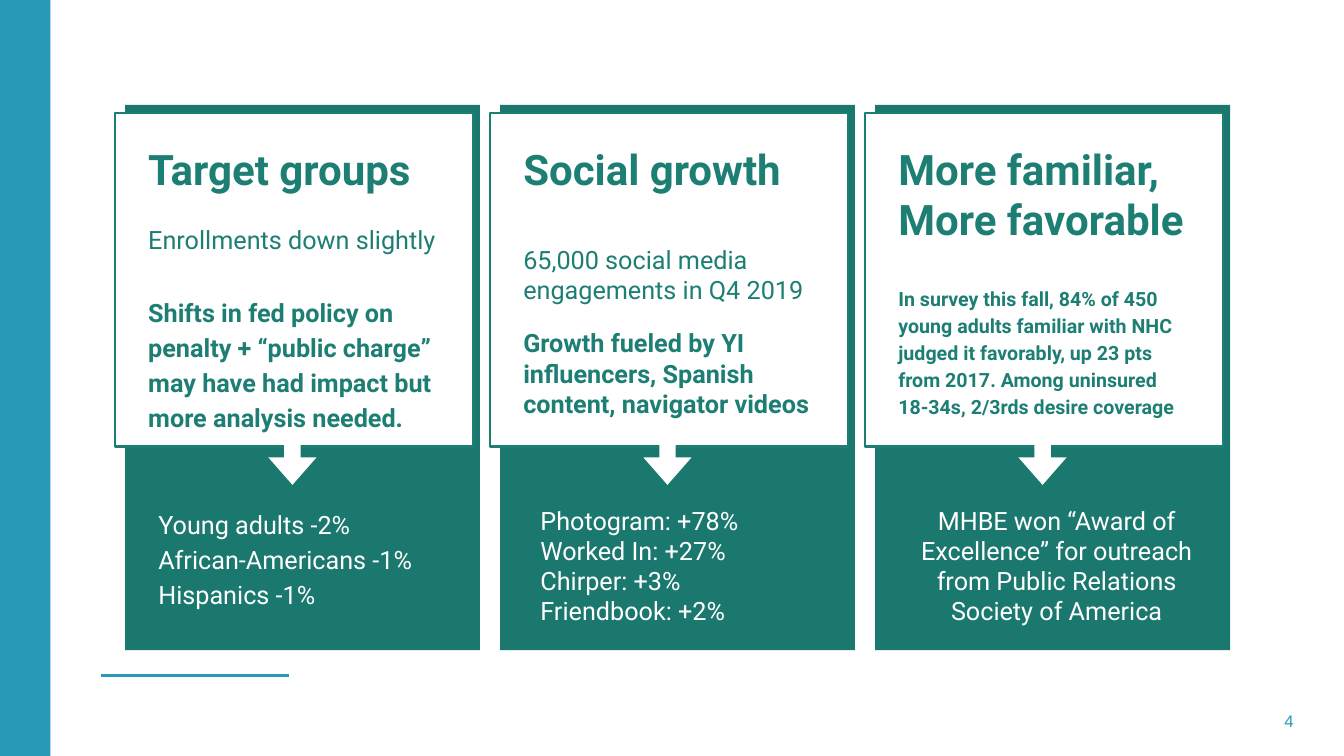
from lxml import etree
from pptx import Presentation
from pptx import util as u
from pptx.dml.color import RGBColor
from pptx.enum import shapes, text
from pptx.oxml.ns import qn

PX = 9144  # EMU per px, 100 px to the inch
COLORS = {"blue": "2899B7", "panel": "1B786E", "green": "1D7E74", "white": "FFFFFF"}
COLUMN_LEFT, COLUMN_PITCH = 124, 372
INSET = 13

# Each text: left offset from its column, top, width, height, paragraphs, style
COLUMNS = [
    [
        (10, 129, 315, 90, ["Target groups"], {"size": 30, "bold": True}),
        (10, 210, 315, 46, ["Enrollments down slightly"], {}),
        (10, 278, 315, 144,
         ["Shifts in fed policy on penalty + “public charge” may have had impact "
          "but more analysis needed."], {"bold": True, "spacing": 1.15}),
        (20, 488, 322, 144,
         ["Young adults -2%", "African-Americans -1%", "Hispanics -1%"],
         {"color": "white", "spacing": 1.15}),
    ],
    [
        (10, 129, 315, 90, ["Social growth"], {"size": 30, "bold": True}),
        (10, 229, 315, 81, ["65,000 social media engagements in Q4 2019"], {}),
        (10, 312, 315, 110,
         ["Growth fueled by YI influencers, Spanish content, navigator videos"],
         {"bold": True}),
        (27, 488, 315, 144,
         ["Photogram: +78%", "Worked In: +27%", "Chirper: +3%", "Friendbook: +2%"],
         {"color": "white"}),
    ],
    [
        (10, 129, 315, 117, ["More familiar,", "More favorable"],
         {"size": 30, "bold": True}),
        (10, 268, 315, 154,
         ["In survey this fall, 84% of 450 young adults familiar with NHC judged it "
          "favorably, up 23 pts from 2017. Among uninsured 18-34s, 2/3rds desire "
          "coverage"], {"size": 14, "bold": True, "spacing": 1.15}),
        (19, 488, 322, 144,
         ["MHBE won “Award of Excellence” for outreach from Public Relations "
          "Society of America"],
         {"color": "white", "align": text.PP_ALIGN.CENTER}),
    ],
]


def color(name):
    return RGBColor.from_string(COLORS[name])


def box(*lengths):
    return [u.Emu(length * PX) for length in lengths]


def add_block(parent, kind, place, fill, line=None):
    shape = parent.add_shape(kind, *box(*place))
    shape.shadow.inherit = False
    shape.fill.solid()
    shape.fill.fore_color.rgb = color(fill)
    if line:
        shape.line.color.rgb = color(line)
        shape.line.width = u.Pt(1.5)
    else:
        shape.line.fill.background()
    return shape


def add_text(parent, place, paragraphs, size=18, bold=False, color_name="green",
             spacing=None, align=text.PP_ALIGN.LEFT, font="Roboto", inset=INSET,
             anchor=text.MSO_ANCHOR.TOP):
    frame = parent.add_textbox(*box(*place)).text_frame
    frame.word_wrap = True
    frame.vertical_anchor = anchor
    frame.margin_left = frame.margin_right = u.Emu(inset * PX)
    frame.margin_top = frame.margin_bottom = u.Emu(inset * PX)
    for index, words in enumerate(paragraphs):
        paragraph = frame.add_paragraph() if index else frame.paragraphs[0]
        paragraph.alignment = align
        if spacing:
            paragraph.line_spacing = spacing
        run = paragraph.add_run()
        run.text = words
        run.font.name = font
        run.font.size = u.Pt(size)
        run.font.bold = bold
        run.font.color.rgb = color(color_name)


def add_rule(parent, left, right, top):
    rule = parent.add_connector(shapes.MSO_CONNECTOR.STRAIGHT,
                                *box(left, top, right, top))
    rule.line.color.rgb = color("blue")
    rule.line.width = u.Pt(2)
    etree.SubElement(rule._element.spPr, qn("a:effectLst"))


def add_column(slide, left, texts):
    column = slide.shapes.add_group_shape().shapes
    rectangle = shapes.MSO_SHAPE.RECTANGLE
    add_block(column, rectangle, (left, 104, 352, 541), "panel")
    add_block(column, rectangle, (left - 10, 112, 355, 331), "white", "green")

    # Arrow from the white card into the panel
    arrow = add_block(column, shapes.MSO_SHAPE.RIGHT_ARROW,
                      (left + 140, 431, 52, 48), "white")
    arrow.rotation = 90
    arrow.adjustments[0], arrow.adjustments[1] = 0.34, 0.57

    for offset, top, width, height, paragraphs, style in texts:
        options = dict(style)
        options["color_name"] = options.pop("color", "green")
        add_text(column, (left + offset, top, width, height), paragraphs, **options)


def main():
    presentation = Presentation()
    presentation.slide_width, presentation.slide_height = box(1333, 750)
    slide = presentation.slides.add_slide(presentation.slide_layouts[6])

    # Frame of the slide: side bar, rule and page number
    add_rule(slide.shapes, 100, 287, 670)
    add_block(slide.shapes, shapes.MSO_SHAPE.RECTANGLE, (0, 0, 50, 750), "blue")
    add_text(slide.shapes, (942, 695, 341, 40), ["4"], size=12, color_name="blue",
             align=text.PP_ALIGN.RIGHT, font="Arial", inset=0,
             anchor=text.MSO_ANCHOR.MIDDLE)

    # Three columns
    for index, texts in enumerate(COLUMNS):
        add_column(slide, COLUMN_LEFT + index * COLUMN_PITCH, texts)

    presentation.save("out.pptx")


if __name__ == "__main__":
    main()
